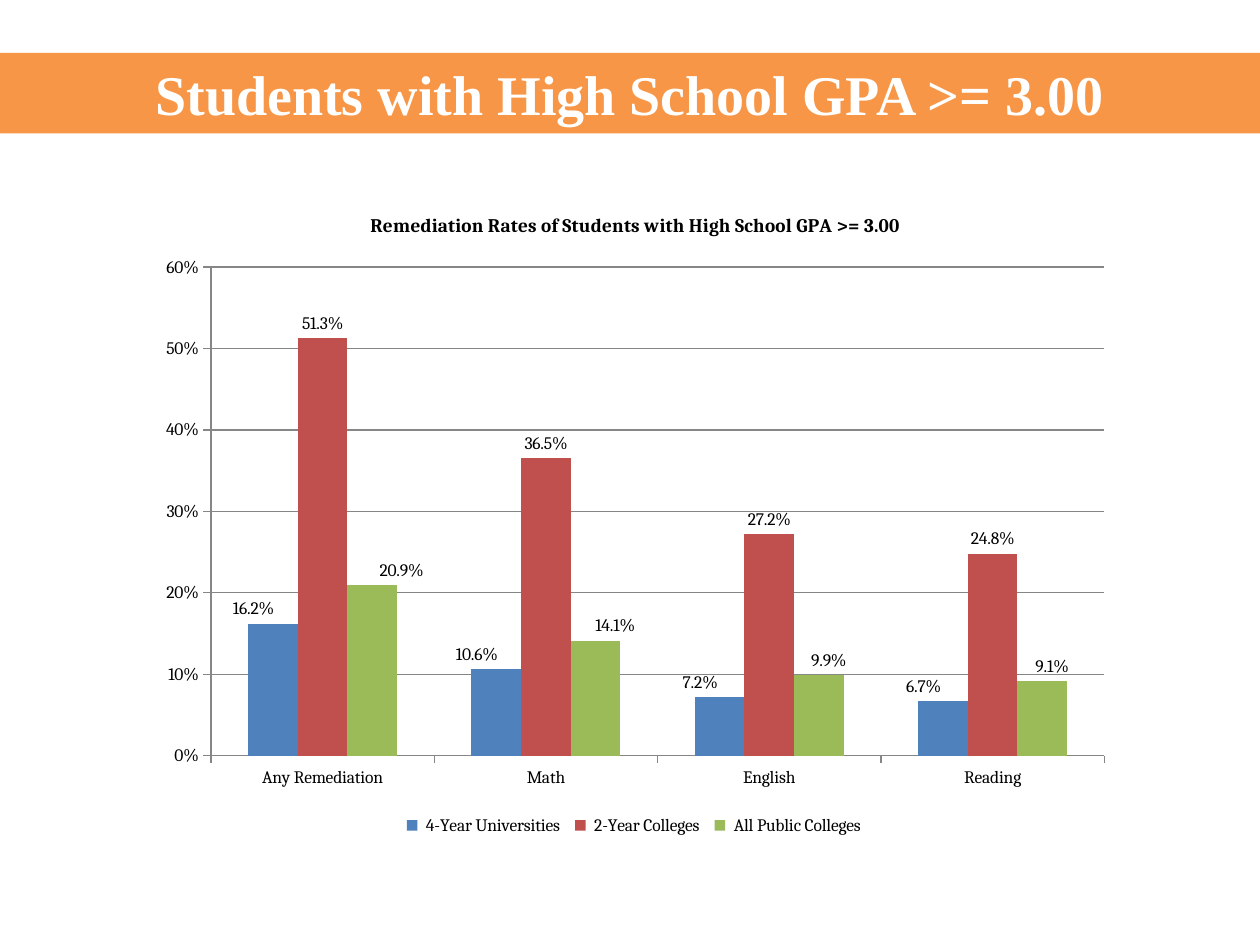
from dataclasses import dataclass

from lxml import etree
from pptx import Presentation
from pptx.chart.data import CategoryChartData
from pptx.dml.color import RGBColor
from pptx.enum.chart import XL_CHART_TYPE, XL_LABEL_POSITION, XL_LEGEND_POSITION, XL_TICK_MARK
from pptx.enum.shapes import MSO_SHAPE
from pptx.enum.text import MSO_ANCHOR, PP_ALIGN
from pptx.oxml.ns import qn
from pptx.util import Inches, Pt

COLUMNS = XL_CHART_TYPE.COLUMN_CLUSTERED
OUTSIDE_END = XL_LABEL_POSITION.OUTSIDE_END
LEGEND_BOTTOM = XL_LEGEND_POSITION.BOTTOM
TICK_OUTSIDE = XL_TICK_MARK.OUTSIDE
RECTANGLE = MSO_SHAPE.RECTANGLE
MIDDLE = MSO_ANCHOR.MIDDLE
CENTER = PP_ALIGN.CENTER


@dataclass(frozen=True)
class Theme:
    banner: str = "F79646"
    white: str = "FFFFFF"
    black: str = "000000"
    axis: str = "868686"
    heading_font: str = "Times New Roman"
    chart_font: str = "Cambria"
    heading_size: int = 32
    chart_title_size: int = 11
    chart_size: int = 10


def write_text(text_frame, text, *, font, size, color, bold=False):
    paragraph = text_frame.paragraphs[0]
    paragraph.alignment = CENTER
    run = paragraph.add_run()
    run.text = text
    run.font.name = font
    run.font.size = Pt(size)
    run.font.bold = bold
    run.font.color.rgb = RGBColor.from_string(color)


def manual_layout(**settings):
    layout = etree.Element(qn("c:layout"))
    manual = etree.SubElement(layout, qn("c:manualLayout"))
    for name, value in settings.items():
        etree.SubElement(manual, qn(f"c:{name}")).set("val", str(value))
    return layout


theme = Theme()
presentation = Presentation()
presentation.slide_width = Inches(10)
presentation.slide_height = Inches(7.5)
slide = presentation.slides.add_slide(presentation.slide_layouts[6])

banner = slide.shapes.add_shape(RECTANGLE, Inches(0), Inches(0.42), Inches(10), Inches(0.64))
banner.shadow.inherit = False
banner.fill.solid()
banner.fill.fore_color.rgb = RGBColor.from_string(theme.banner)
banner.line.fill.background()
banner.text_frame.word_wrap = True
banner.text_frame.vertical_anchor = MIDDLE
write_text(banner.text_frame, "Students with High School GPA >= 3.00",
           font=theme.heading_font, size=theme.heading_size, color=theme.white, bold=True)

series_rows = [
    (" 4-Year Universities ", "4F81BD", (0.162, 0.106, 0.072, 0.067), (-0.02, -0.02, -0.02, -0.02)),
    (" 2-Year Colleges ", "C0504D", (0.513, 0.365, 0.272, 0.248), ()),
    (" All Public Colleges ", "9BBB59", (0.209, 0.141, 0.099, 0.091), (0.03, 0.02, 0.01, 0.01)),
]
chart_data = CategoryChartData(number_format="0.0%")
chart_data.categories = ["Any Remediation", "Math", "English", "Reading"]
for name, color, values, label_shifts in series_rows:
    chart_data.add_series(name, values)

chart = slide.shapes.add_chart(
    COLUMNS, Inches(1.17), Inches(1.5), Inches(7.75), Inches(5.17), chart_data).chart
chart.font.name = theme.chart_font
chart.font.size = Pt(theme.chart_size)
chart.font.color.rgb = RGBColor.from_string(theme.black)
chart.has_title = True
write_text(chart.chart_title.text_frame,
           "Remediation Rates of Students with High School GPA >= 3.00",
           font=theme.chart_font, size=theme.chart_title_size, color=theme.black, bold=True)
chart.has_legend = True
chart.legend.position = LEGEND_BOTTOM
chart.legend.include_in_layout = False

value_axis = chart.value_axis
value_axis.minimum_scale = 0
value_axis.maximum_scale = 0.6
value_axis.major_unit = 0.1
value_axis.has_major_gridlines = True
value_axis.tick_labels.number_format = "0%"
value_axis.tick_labels.number_format_is_linked = False
for axis in (chart.category_axis, value_axis):
    axis.major_tick_mark = TICK_OUTSIDE
for line in (chart.category_axis.format.line, value_axis.format.line,
             value_axis.major_gridlines.format.line):
    line.color.rgb = RGBColor.from_string(theme.axis)
    line.width = Pt(0.75)

plot = chart.plots[0]
plot.gap_width = 150
plot.overlap = 0
plot.vary_by_categories = False
for series, (name, color, values, label_shifts) in zip(plot.series, series_rows):
    series.format.fill.solid()
    series.format.fill.fore_color.rgb = RGBColor.from_string(color)
    labels = series.data_labels
    labels.show_value = True
    labels.number_format = "0.0%"
    labels.number_format_is_linked = False
    labels.position = OUTSIDE_END
    for index, shift in enumerate(label_shifts):
        series.points[index].data_label.position = OUTSIDE_END
    for label, shift in zip(chart.element.findall(f".//{qn('c:ser')}")[series.index].iter(qn("c:dLbl")),
                            label_shifts):
        number_format = etree.Element(qn("c:numFmt"), formatCode="0.0%", sourceLinked="0")
        label.insert(1, manual_layout(x=shift, y=0))
        label.insert(2, number_format)

plot_area = chart.element.find(f".//{qn('c:plotArea')}")
for layout in plot_area.findall(qn("c:layout")):
    plot_area.remove(layout)
plot_area.insert(0, manual_layout(layoutTarget="inner", xMode="edge", yMode="edge",
                                  x=0.065, y=0.12, w=0.915, h=0.75))

presentation.save("out.pptx")
